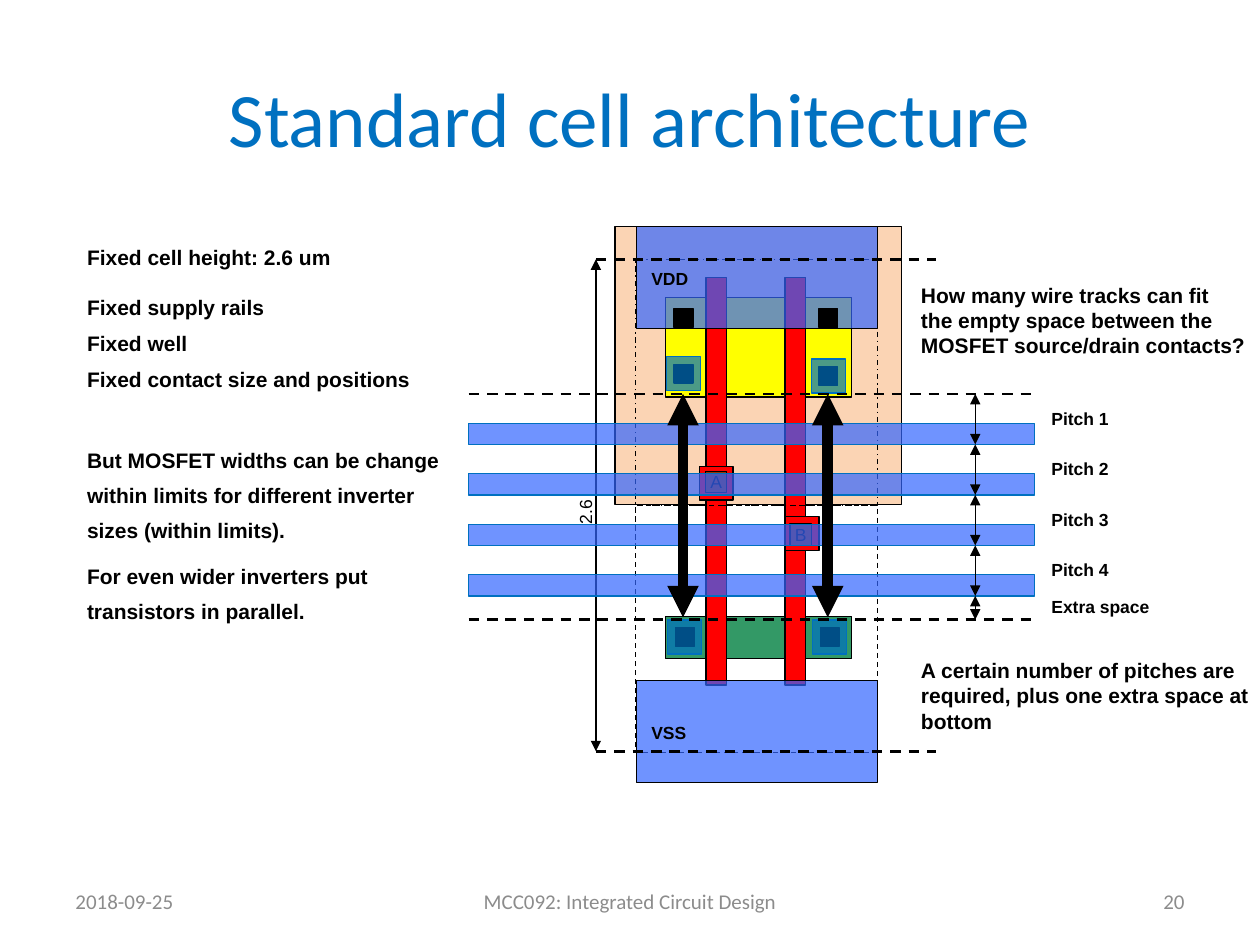
from lxml import etree
from pptx import Presentation
from pptx.dml.color import RGBColor
from pptx.enum.dml import MSO_LINE
from pptx.enum.shapes import MSO_CONNECTOR, MSO_SHAPE
from pptx.enum.text import MSO_ANCHOR, PP_ALIGN
from pptx.oxml.ns import qn
from pptx.util import Pt

RECT, STRAIGHT = MSO_SHAPE.RECTANGLE, MSO_CONNECTOR.STRAIGHT
DASH, DASH_DOT = MSO_LINE.DASH, MSO_LINE.DASH_DOT
TOP, MIDDLE = MSO_ANCHOR.TOP, MSO_ANCHOR.MIDDLE
LEFT, CENTER, RIGHT = PP_ALIGN.LEFT, PP_ALIGN.CENTER, PP_ALIGN.RIGHT

BLACK, RED, METAL, BLUE, GREY = "000000", "FF0000", "3366FF", "0070C0", "8C8C8C"
PLAIN, NOTE, LABEL = (7.2, 3.6, 7.2, 3.6), (0.72, 2.9, 0.72, 2.9), (5.04, 2.9, 5.04, 2.9)
PITCH = (5.04, 1.44, 5.04, 2.9)

# Layout of the cell: left, top, width, height
LAYERS = [
    ((380.2, 352.1, 106.5, 24.4), "339966"),  # n diffusion
    ((351.5, 129.4, 163.8, 158.9), "FBD4B4"),  # n well
    ((380.2, 169.9, 106.5, 57), "FFFF00"),  # p diffusion
    ((403.4, 158.4, 11.7, 233), RED),  # gate A
    ((448.6, 158.4, 11.9, 233), RED),  # gate B
]
CELL_HALVES = [((363, 288.7, 138.4, 141.4), DASH), ((363, 148.3, 138.4, 140.4), DASH_DOT)]
RAILS = [("VDD", (363.6, 129.4, 138, 58.4), (367.2, 150.5, 44, 26)),
         ("VSS", (363.6, 388.9, 138, 58.4), (367.2, 409.7, 33, 17))]
CONTACTS = [(385.2, 176.4), (468, 176.4), (468.7, 358.6), (385.9, 358.6),
            (385.2, 208.1), (468, 209.5)]
CONTACT_PADS = [(380.9, 203.8), (463.7, 205.2), (381.6, 354.3), (464.4, 354.3)]
GATE_PINS = [("B", (448.6, 295.2), (451.5, 299.5)), ("A", (399.6, 266.4), (403.2, 269.3))]
CONTACT, PIN, PAD = 10.8, 12.2, 19.4

# Wire tracks
TRACKS = ["Pitch 1", "Pitch 2", "Pitch 3", "Pitch 4"]
TRACK_LEFT, TRACK_WIDTH, WIRE_TOP, WIRE_HEIGHT = 267.8, 323.3, 241.9, 12.2
STEP, FIRST_TRACK, LAST_TRACK = 28.85, 225.1, 354.1
CELL_TOP, CELL_BOTTOM, CELL_LEFT, CELL_RIGHT = 148.2, 429.3, 340.5, 535
PITCH_X, LABEL_X = 557.3, 595.8

# Notes: text, line spacing, space after
DESIGN_RULES = [
    ("Fixed cell height: 2.6 um", 1, 14.3),
    ("Fixed supply rails", 1, 6),
    ("Fixed well", 1, 6),
    ("Fixed contact size and positions", 1, 26.3),
    ("But MOSFET widths can be change within limits for different inverter sizes (within limits).", 1.4, 6),
    ("For even wider inverters put transistors in parallel.", 1.4, 6),
]
QUESTION = "How many wire tracks can fit \nthe empty space between the MOSFET source/drain contacts?"
ANSWER = "A certain number of pitches are required, plus one extra space at bottom"
FOOTER = [("2018-09-25", (36, 500.4, 168, 28.8), LEFT),
          ("MCC092: Integrated Circuit Design", (246, 500.4, 228, 28.8), CENTER),
          ("20", (516, 500.4, 168, 28.8), RIGHT)]

deck = Presentation()
deck.slide_width, deck.slide_height = Pt(720), Pt(540)
page = deck.slides.add_slide(deck.slide_layouts[6])


def color(value):
    return RGBColor.from_string(value)


def add_rect(place, fill=None, line=BLACK, alpha=None, dash=None):
    box = page.shapes.add_shape(RECT, *map(Pt, place))
    box.shadow.inherit = False
    if fill:
        box.fill.solid()
        box.fill.fore_color.rgb = color(fill)
    else:
        box.fill.background()
    if alpha:
        tone = box._element.spPr.find(qn("a:solidFill"))[0]
        etree.SubElement(tone, qn("a:alpha"), val=str(alpha * 1000))
    box.line.color.rgb = color(line)
    box.line.width = Pt(0.75)
    if dash:
        box.line.dash_style = dash
    return box


def add_line(x1, y1, x2, y2, width=0.75, dash=None, arrows=False):
    line = page.shapes.add_connector(STRAIGHT, Pt(x1), Pt(y1), Pt(x2), Pt(y2))
    line.line.color.rgb = color(BLACK)
    line.line.width = Pt(width)
    if dash:
        line.line.dash_style = dash
    if arrows:
        for end in ("a:headEnd", "a:tailEnd"):
            etree.SubElement(line.line._get_or_add_ln(), qn(end), type="triangle")
    etree.SubElement(line._element.spPr, qn("a:effectLst"))


def write(box, paragraphs, size, font="Arial", tone=BLACK, bold=False, align=LEFT,
          anchor=TOP, insets=PLAIN, wrap=True):
    frame = box.text_frame
    frame.word_wrap = wrap
    frame.vertical_anchor = anchor
    frame.margin_left, frame.margin_top, frame.margin_right, frame.margin_bottom = map(Pt, insets)
    for index, (text, spacing, after) in enumerate(paragraphs):
        para = frame.add_paragraph() if index else frame.paragraphs[0]
        para.text = text
        para.alignment = align
        para.line_spacing = spacing
        para.space_after = Pt(after)
        para.font.size, para.font.name, para.font.bold = Pt(size), font, bold
        para.font.color.rgb = color(tone)


def add_text(place, text, size, **style):
    box = page.shapes.add_textbox(*map(Pt, place))
    write(box, text if isinstance(text, list) else [(text, 1, 0)], size, **style)
    return box


# Wells, diffusions, gates and supply rails
for place, fill in LAYERS:
    add_rect(place, fill)
for place, dash in CELL_HALVES:
    add_rect(place, dash=dash)
for name, place, label_place in RAILS:
    add_rect(place, METAL, alpha=70)
    add_text(label_place, name, 10, bold=True, insets=LABEL, wrap=False)

# Cell height
for y in (CELL_TOP, CELL_BOTTOM):
    add_line(CELL_LEFT, y, CELL_RIGHT, y, 1.5, DASH)
add_line(CELL_LEFT, CELL_TOP, CELL_LEFT, CELL_BOTTOM, arrows=True)
height_label = add_text((323.3, 283, 28, 19.4), "2.6", 10, insets=LABEL, wrap=False)
height_label.text_frame._txBody.bodyPr.set("vert", "vert270")

# Contacts and gate pins
for left, top in CONTACTS:
    add_rect((left, top, CONTACT, CONTACT), BLACK)
for name, (pad_left, pad_top), (pin_left, pin_top) in GATE_PINS:
    add_rect((pad_left, pad_top, PAD, PAD), RED)
    pin = add_rect((pin_left, pin_top, PIN, PIN), "993300")
    write(pin, [(name, 1, 0)], 10, align=CENTER, anchor=MIDDLE, insets=(0, 0, 0, 0), wrap=False)
for left, top in CONTACT_PADS:
    add_rect((left, top, PAD, PAD), BLUE, BLUE, alpha=70)
add_line(418.3, 388.9, 443.5, 388.9)

# Wire tracks and their pitches
for index, name in enumerate(TRACKS):
    offset = index * STEP
    add_rect((TRACK_LEFT, WIRE_TOP + offset, TRACK_WIDTH, WIRE_HEIGHT), METAL, BLUE, alpha=70)
    start = FIRST_TRACK + offset
    add_line(PITCH_X, start, PITCH_X, start + STEP, arrows=True)
    add_text((LABEL_X, start + 6.4, 44, 15), name, 10, bold=True, insets=PITCH, wrap=False)
add_line(PITCH_X, FIRST_TRACK + len(TRACKS) * STEP, PITCH_X, LAST_TRACK, arrows=True)
add_text((LABEL_X, 339.1, 71, 15), "Extra space", 10, bold=True, insets=PITCH, wrap=False)
for y in (FIRST_TRACK, LAST_TRACK):
    add_line(TRACK_LEFT, y, TRACK_LEFT + TRACK_WIDTH, y, 1.5, DASH)
for x in (390.3, 473):
    add_line(x, FIRST_TRACK, x, 352.8, 6, arrows=True)

# Title, notes and footer
add_text((36, 21.6, 648, 90), "Standard cell architecture", 44, font="Calibri", tone=BLUE,
         align=CENTER, anchor=MIDDLE)
add_text((49, 136.8, 209.5, 241.2), DESIGN_RULES, 12, bold=True, insets=NOTE)
for text, top in ((QUESTION, 158.4), (ANSWER, 373)):
    add_text((525.6, top, 189.4, 54.7), text, 12, bold=True, insets=NOTE)
for text, place, align in FOOTER:
    add_text(place, text, 12, font="Calibri", tone=GREY, align=align, anchor=MIDDLE)

deck.save("out.pptx")
